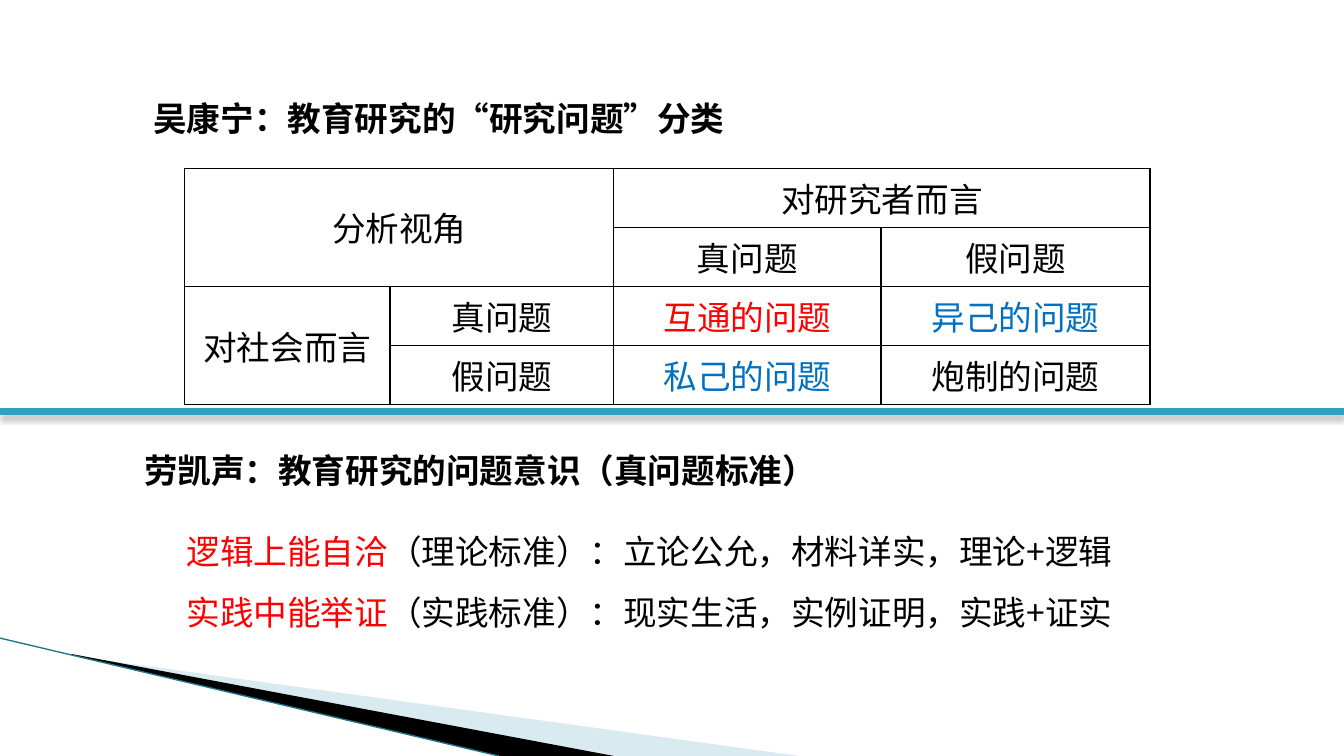
from lxml import etree
from pptx import Presentation
from pptx import util as u
from pptx.dml.color import RGBColor
from pptx.enum import shapes, text
from pptx.oxml import ns, parse_xml

THEME = {
    "font": "Noto Sans CJK SC",
    "size": u.Pt(24),
    "black": "000000",
    "red": "FF0000",
    "blue": "0070C0",
    "divider": "2DA2BF",
    "ribbon": "A0CBDC",
    "edge": "1E768C",
}
NS = 'xmlns:a="http://schemas.openxmlformats.org/drawingml/2006/main"'


def write(paragraph, runs, bold=False, **layout):
    for name, value in layout.items():
        setattr(paragraph, name, value)
    for wording, colour in runs:
        run = paragraph.add_run()
        run.text = wording
        for name, value in {"name": THEME["font"], "size": THEME["size"], "bold": bold}.items():
            setattr(run.font, name, value)
        run.font.color.rgb = RGBColor.from_string(THEME[colour])
        east_asian = etree.SubElement(run.font._element, ns.qn("a:ea"))
        east_asian.set("typeface", THEME["font"])


def draw_line(start, end, colour, width, effects=""):
    line = slide.shapes.add_connector(shapes.MSO_CONNECTOR.STRAIGHT, *map(u.Cm, start + end))
    line.line.color.rgb = RGBColor.from_string(THEME[colour])
    line.line.width = u.Pt(width)
    line._element.spPr.append(parse_xml(f"<a:effectLst {NS}>{effects}</a:effectLst>"))


deck = Presentation()
deck.slide_width, deck.slide_height = u.Cm(33.87), u.Cm(19.05)
slide = deck.slides.add_slide(deck.slide_layouts[5])

ribbons = [
    ("ribbon", 40, [(1.85, 16.53), (20.14, 19.05), (15.44, 19.05), (1.85, 16.51)]),
    ("black", 100, [(1.8, 16.48), (15.47, 19.05), (12.6, 19.05), (1.83, 16.51)]),
]
for colour, opacity, corners in ribbons:
    points = [(u.Cm(x), u.Cm(y)) for x, y in corners]
    builder = slide.shapes.build_freeform(*points[0], scale=1.0)
    builder.add_line_segments(points[1:], close=True)
    ribbon = builder.convert_to_shape()
    ribbon.shadow.inherit = False
    ribbon.line.fill.background()
    ribbon.fill.solid()
    ribbon.fill.fore_color.rgb = RGBColor.from_string(THEME[colour])
    shade = ribbon._element.spPr.find(".//" + ns.qn("a:srgbClr"))
    etree.SubElement(shade, ns.qn("a:alpha")).set("val", str(opacity * 1000))
draw_line((0, 16.08), (12.57, 19.05), "edge", 0.95)

columns = [5.18, 5.64, 6.73, 6.78]
row_height = 1.49
problems = [
    ["分析视角", "", "对研究者而言", ""],
    ["", "", "真问题", "假问题"],
    ["对社会而言", "真问题", "互通的问题", "异己的问题"],
    ["", "假问题", "私己的问题", "炮制的问题"],
]
highlights = {"互通的问题": "red", "异己的问题": "blue", "私己的问题": "blue"}
matrix = slide.shapes.add_table(
    4, 4, u.Cm(4.65), u.Cm(4.24), u.Cm(sum(columns)), u.Cm(row_height * 4)
).table
matrix.first_row = matrix.horz_banding = False
for column, width in zip(matrix.columns, columns):
    column.width = u.Cm(width)
for row, labels in enumerate(problems):
    matrix.rows[row].height = u.Cm(row_height)
    for column, label in enumerate(labels):
        cell = matrix.cell(row, column)
        cell.vertical_anchor = text.MSO_ANCHOR.MIDDLE
        for side in "LRTB":
            cell._tc.get_or_add_tcPr().append(parse_xml(
                f'<a:ln{side} {NS} w="12700"><a:solidFill>'
                f'<a:srgbClr val="{THEME["black"]}"/></a:solidFill></a:ln{side}>'
            ))
        cell.fill.background()
        if label:
            write(cell.text_frame.paragraphs[0], [(label, highlights.get(label, "black"))],
                  alignment=text.PP_ALIGN.CENTER)
for first, last in [((0, 0), (1, 1)), ((0, 2), (0, 3)), ((2, 0), (3, 0))]:
    matrix.cell(*first).merge(matrix.cell(*last))

classification = slide.shapes.title
criteria = slide.shapes.add_textbox(0, 0, 0, 0)
awareness = slide.shapes.add_textbox(0, 0, 0, 0)
passages = [
    (classification, (3.61, 2.34, 15.04, 1.27), False, True, None,
     [[("吴康宁：教育研究的“研究问题”分类", "black")]]),
    (criteria, (4.45, 12.75, 24.33, 3.33), True, False, 1.5,
     [[("逻辑上能自洽", "red"), ("（理论标准）：立论公允，材料详实，理论+逻辑", "black")],
      [("实践中能举证", "red"), ("（实践标准）：现实生活，实例证明，实践+证实", "black")]]),
    (awareness, (3.38, 11.2, 17.7, 1.27), False, True, None,
     [[("劳凯声：教育研究的问题意识（真问题标准）", "black")]]),
]
for passage, place, wraps, bold, spacing, paragraphs in passages:
    for name, length in zip(("left", "top", "width", "height"), place):
        setattr(passage, name, u.Cm(length))
    frame = passage.text_frame
    frame_format = {
        "word_wrap": wraps,
        "auto_size": text.MSO_AUTO_SIZE.SHAPE_TO_FIT_TEXT,
        "vertical_anchor": text.MSO_ANCHOR.TOP,
    }
    for name, value in frame_format.items():
        setattr(frame, name, value)
    for index, runs in enumerate(paragraphs):
        paragraph = frame.add_paragraph() if index else frame.paragraphs[0]
        write(paragraph, runs, bold, alignment=text.PP_ALIGN.LEFT, line_spacing=spacing)

draw_line(
    (0, 10.37), (33.87, 10.37), "divider", 4.33,
    '<a:outerShdw blurRad="50800" dist="38100" dir="5400000" rotWithShape="0">'
    f'<a:srgbClr val="{THEME["black"]}"><a:alpha val="35000"/></a:srgbClr></a:outerShdw>',
)

deck.save("out.pptx")
